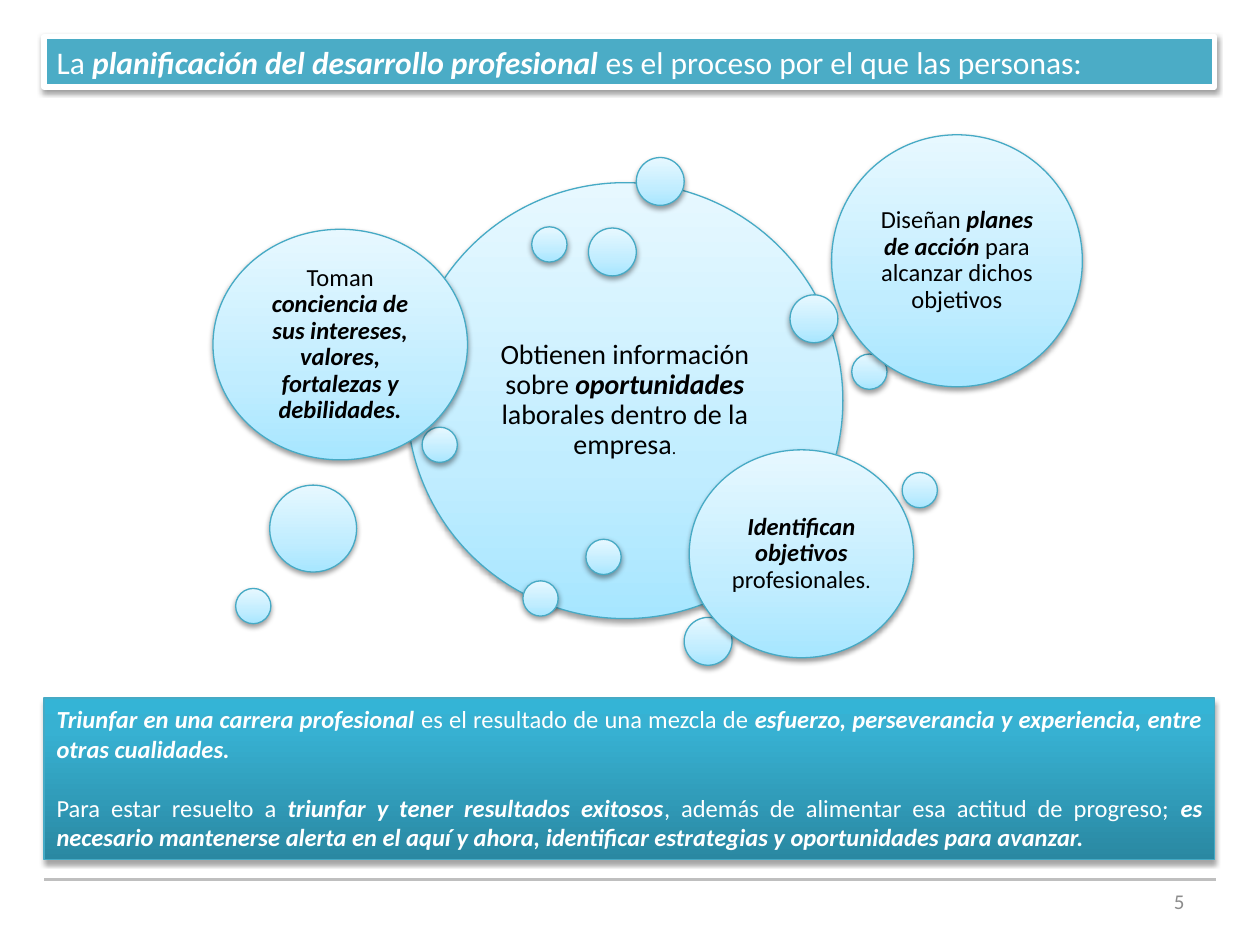
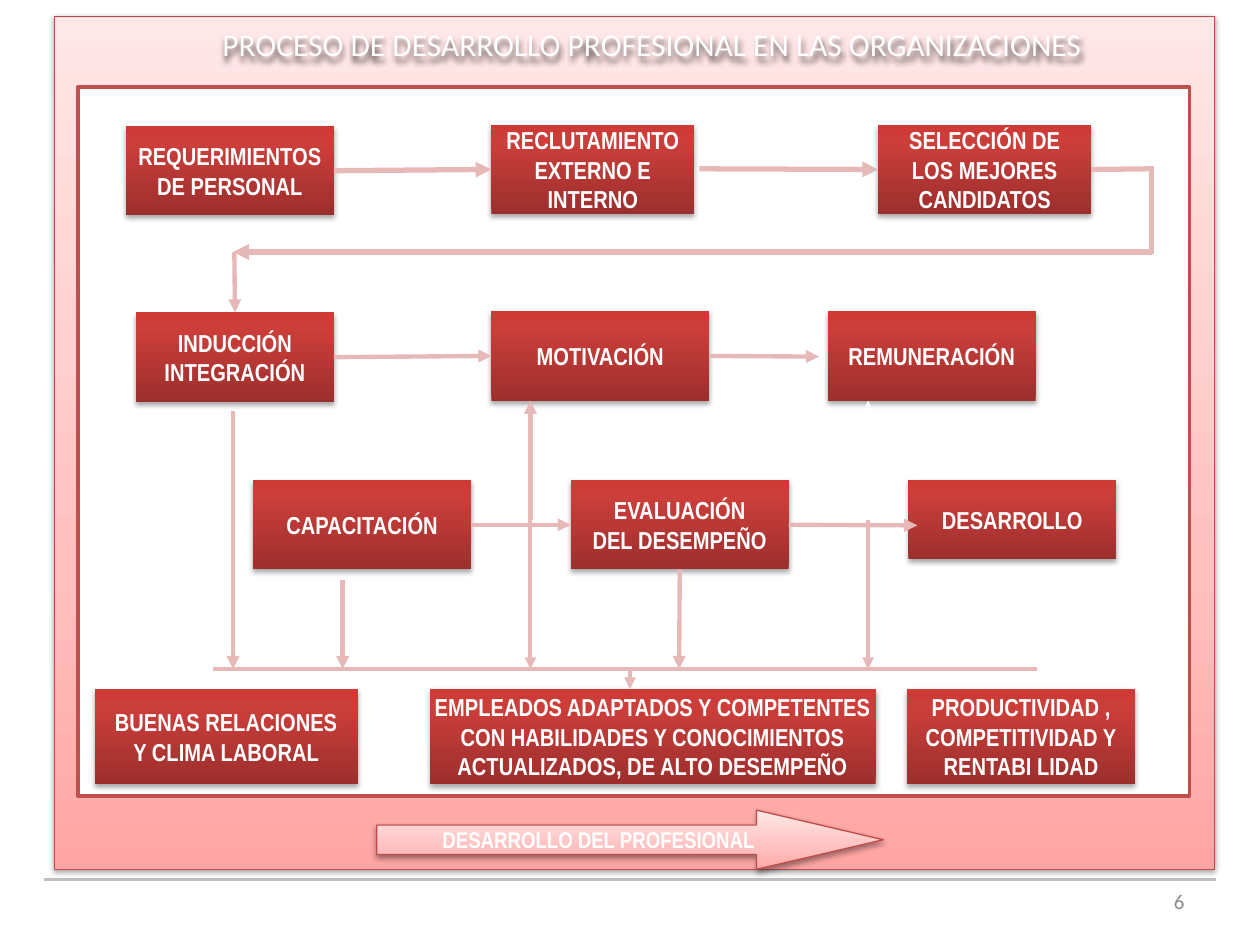
from typing import NamedTuple, Optional, Union

from lxml import etree
from pptx import Presentation
from pptx import util as u
from pptx.dml.color import RGBColor
from pptx.enum import shapes, text
from pptx.oxml.ns import qn

WHITE, BLACK, GREY, RULE = "FFFFFF", "000000", "8C8C8C", "BFBFBF"
TEAL, TEAL_EDGE = "4BACC6", "46AAC5"
RED, RED_EDGE, PINK = "C0504D", "BF4C48", "E6B9B8"
PALE_BLUE = ((0, "A7E6FF"), (35, "C1EDFF"), (100, "E7F8FF"))
DEEP_BLUE = ((0, "2A88A2"), (80, "37B1D2"), (100, "34B4D6"))
PALE_RED = ((0, "FFA6A5"), (35, "FFC0BF"), (100, "FFE7E7"))
DEEP_RED = ((0, "9C2F2D"), (80, "CB3E3A"), (100, "CE3B37"))
BODY_FONT, BOX_FONT = "Calibri", "Arial Narrow"
OVAL = shapes.MSO_SHAPE.OVAL
RECTANGLE = shapes.MSO_SHAPE.RECTANGLE
CENTER, JUSTIFY, RIGHT = text.PP_ALIGN.CENTER, text.PP_ALIGN.JUSTIFY, text.PP_ALIGN.RIGHT
MIDDLE, TOP = text.MSO_ANCHOR.MIDDLE, text.MSO_ANCHOR.TOP
SMALL, MEDIUM = 0.28, 0.38


class Area(NamedTuple):
    left: float
    top: float
    width: float
    height: float


class Bubble(NamedTuple):
    area: Area
    words: str = ""
    size: float = 14
    inset: float = 0.06
    period_size: Optional[float] = None


class Step(NamedTuple):
    name: str
    area: Area
    words: str


class Joint(NamedTuple):
    step: str
    side: int


class Point(NamedTuple):
    x: float
    y: float


class Link(NamedTuple):
    start: Union[Joint, Point]
    end: Union[Joint, Point]
    width: float = 2.5
    arrow: bool = True
    color: str = PINK


def dot(left: float, top: float, diameter: float = SMALL) -> Bubble:
    return Bubble(Area(left, top, diameter, diameter))


BUBBLES = (
    Bubble(Area(3.23, 1.45, 3.46, 3.46),
           "Obtienen información sobre *oportunidades *laborales dentro de la empresa",
           16, 0.07, 10),
    dot(5.05, 1.25, MEDIUM),
    dot(4.15, 4.61),
    dot(6.76, 2.81),
    dot(5.43, 4.9, MEDIUM),
    dot(4.22, 1.8),
    dot(3.35, 3.39),
    Bubble(Area(1.69, 1.82, 2.02, 1.83),
           "Toman *conciencia de sus intereses, valores, fortalezas y debilidades.*"),
    dot(4.67, 1.81, MEDIUM),
    dot(2.14, 3.85, 0.69),
    Bubble(Area(6.6, 1.07, 1.99, 2),
           "Diseñan *planes de acción *para alcanzar dichos objetivos"),
    dot(6.27, 2.34, MEDIUM),
    dot(1.87, 4.67),
    dot(4.65, 4.28),
    Bubble(Area(5.47, 3.57, 1.78, 1.65), "*Identifican objetivos *profesionales",
           period_size=12),
    dot(7.16, 3.75),
)

SUCCESS = (
    "*Triunfar en una carrera profesional *es el resultado de una mezcla de "
    "*esfuerzo, perseverancia y experiencia, entre otras cualidades.*\n"
    "Para estar resuelto a* triunfar y tener resultados exitosos*, además de alimentar "
    "esa actitud de progreso; *es necesario mantenerse alerta en el aquí y ahora, "
    "identificar estrategias y oportunidades para avanzar.*"
)

STEPS = (
    Step("needs", Area(1, 1, 1.65, 0.71), "REQUERIMIENTOS\nDE PERSONAL"),
    Step("recruiting", Area(3.9, 0.99, 1.61, 0.71), "RECLUTAMIENTO\nEXTERNO E\nINTERNO"),
    Step("selection", Area(6.97, 0.99, 1.69, 0.71), "SELECCIÓN DE\nLOS MEJORES\nCANDIDATOS"),
    Step("induction", Area(1.08, 2.48, 1.57, 0.71), "INDUCCIÓN\nINTEGRACIÓN"),
    Step("motivation", Area(3.9, 2.47, 1.73, 0.71), "MOTIVACIÓN"),
    Step("pay", Area(6.57, 2.47, 1.65, 0.71), "REMUNERACIÓN"),
    Step("training", Area(2.01, 3.81, 1.73, 0.71), "CAPACITACIÓN"),
    Step("evaluation", Area(4.53, 3.81, 1.73, 0.71), "EVALUACIÓN\nDEL DESEMPEÑO"),
    Step("growth", Area(7.21, 3.81, 1.65, 0.63), "DESARROLLO"),
    Step("climate", Area(0.75, 5.47, 2.09, 0.75), "BUENAS RELACIONES\nY CLIMA LABORAL"),
    Step("staff", Area(3.41, 5.47, 3.54, 0.75),
         "EMPLEADOS ADAPTADOS Y COMPETENTES\nCON HABILIDADES Y CONOCIMIENTOS\n"
         "ACTUALIZADOS, DE ALTO DESEMPEÑO"),
    Step("output", Area(7.2, 5.47, 1.81, 0.75),
         "PRODUCTIVIDAD ,\nCOMPETITIVIDAD Y\nRENTABI LIDAD"),
)

RESULTS_Y, RETURN_Y, RETURN_X = 5.31, 2, 9.14
LINKS = (
    Link(Joint("needs", 3), Joint("recruiting", 1), 3),
    Link(Point(5.55, 1.34), Joint("selection", 1), 3),
    Link(Joint("selection", 3), Point(RETURN_X, 1.34), 3, False),
    Link(Point(RETURN_X, 1.32), Point(RETURN_X, 2.02), 3, False),
    Link(Point(RETURN_X, RETURN_Y), Point(1.85, RETURN_Y), 3),
    Link(Point(1.86, RETURN_Y), Joint("induction", 0)),
    Link(Joint("induction", 3), Joint("motivation", 1)),
    Link(Joint("motivation", 3), Point(6.5, 2.83)),
    Link(Joint("training", 3), Joint("evaluation", 1)),
    Link(Joint("evaluation", 3), Point(7.28, 4.17)),
    Link(Point(1.85, 3.26), Point(1.85, RESULTS_Y)),
    Link(Point(4.21, 4.13), Point(4.21, 3.18)),
    Link(Point(6.89, 4.13), Point(6.89, 3.18), color=WHITE),
    Link(Joint("evaluation", 2), Point(5.39, RESULTS_Y)),
    Link(Point(2.72, 4.6), Point(2.72, RESULTS_Y)),
    Link(Point(1.69, RESULTS_Y), Point(8.23, RESULTS_Y), 2.25, False),
    Link(Point(5, RESULTS_Y), Point(5, 5.47), 2.25),
    Link(Point(4.21, 4.13), Point(4.21, RESULTS_Y), 2.25),
    Link(Point(6.89, 4.13), Point(6.89, RESULTS_Y), 2.25),
)


def rgb(color: str) -> RGBColor:
    return RGBColor.from_string(color)


def inches(values) -> list:
    return [u.Inches(value) for value in values]


def place(shape, area: Area) -> None:
    shape.left, shape.top, shape.width, shape.height = inches(area)


def add_child(parent, tag: str, **attributes):
    return etree.SubElement(parent, qn(tag), attributes)


def paint(shape, fill=None, line: Optional[str] = None, width: float = 0.75) -> None:
    if isinstance(fill, str):
        shape.fill.solid()
        shape.fill.fore_color.rgb = rgb(fill)
    elif fill:
        shape.fill.gradient()
        shape.fill.gradient_angle = 90
        stops = shape.element.spPr.find(qn("a:gradFill")).find(qn("a:gsLst"))
        for stop in list(stops):
            stops.remove(stop)
        for position, color in fill:
            stop = add_child(stops, "a:gs", pos=str(position * 1000))
            add_child(stop, "a:srgbClr", val=color)
    if line:
        shape.line.color.rgb = rgb(line)
        shape.line.width = u.Pt(width)
    else:
        shape.line.fill.background()
    shape.shadow.inherit = False


def cast_shadow(shape, opacity: int = 38, distance: float = 1.6) -> None:
    effects = shape.element.spPr.find(qn("a:effectLst"))
    shadow = add_child(effects, "a:outerShdw", blurRad=str(u.Pt(3.1)),
                       dist=str(u.Pt(distance)), dir="5400000", rotWithShape="0")
    color = add_child(shadow, "a:srgbClr", val=BLACK)
    add_child(color, "a:alpha", val=str(opacity * 1000))


def write(shape, words: str, *, size: float, color: str = WHITE, font: str = BODY_FONT,
          bold: bool = False, align=CENTER, anchor=MIDDLE, wrap: bool = True,
          inset: Optional[float] = None, line_spacing: float = 1, gap: float = 0,
          period_size: Optional[float] = None) -> None:
    frame = shape.text_frame
    frame.auto_size = text.MSO_AUTO_SIZE.NONE
    frame.word_wrap = wrap
    frame.vertical_anchor = anchor
    side, edge = (0.1, 0.05) if inset is None else (inset, inset)
    frame.margin_left = frame.margin_right = u.Inches(side)
    frame.margin_top = frame.margin_bottom = u.Inches(edge)
    for index, line in enumerate(words.split("\n")):
        paragraph = frame.add_paragraph() if index else frame.paragraphs[0]
        paragraph.alignment = align
        paragraph.line_spacing = line_spacing
        if index:
            paragraph.space_before = u.Pt(gap)
        pieces = [(piece, number % 2 == 1, size)
                  for number, piece in enumerate(line.split("*")) if piece]
        if period_size:
            pieces.append((".", False, period_size))
        for piece, emphasis, piece_size in pieces:
            run = paragraph.add_run()
            run.text = piece
            run.font.name = font
            run.font.size = u.Pt(piece_size)
            run.font.bold = bold or emphasis
            run.font.italic = emphasis
            run.font.color.rgb = rgb(color)


def add_block(slide, kind, area: Area, fill, line: Optional[str] = None, width: float = 0.75):
    shape = slide.shapes.add_shape(kind, *inches(area))
    paint(shape, fill, line, width)
    return shape


def add_link(slide, link: Link, boxes: dict):
    ends = []
    for end in (link.start, link.end):
        if isinstance(end, Joint):
            box = boxes[end.step]
            x = box.left + box.width * (0.5, 0, 0.5, 1)[end.side]
            y = box.top + box.height * (0, 0.5, 1, 0.5)[end.side]
            ends += [int(x), int(y)]
        else:
            ends += inches(end)
    connector = slide.shapes.add_connector(shapes.MSO_CONNECTOR.STRAIGHT, *ends)
    if isinstance(link.start, Joint):
        connector.begin_connect(boxes[link.start.step], link.start.side)
    if isinstance(link.end, Joint):
        connector.end_connect(boxes[link.end.step], link.end.side)
    connector.line.color.rgb = rgb(link.color)
    connector.line.width = u.Pt(link.width)
    properties = connector.element.spPr
    if link.arrow:
        add_child(properties.find(qn("a:ln")), "a:tailEnd", type="triangle")
    add_child(properties, "a:effectLst")


def add_slide(presentation, number: int):
    slide = presentation.slides.add_slide(presentation.slide_layouts[5])
    add_link(slide, Link(Point(0.35, 6.98), Point(9.65, 6.98), 2, False, RULE), {})
    label = slide.shapes.add_textbox(*inches(Area(7.17, 6.95, 2.33, 0.4)))
    write(label, str(number), size=12, color=GREY, align=RIGHT)
    return slide


def build_planning_slide(presentation) -> None:
    slide = add_slide(presentation, 5)
    title = slide.shapes.title
    place(title, Area(0.35, 0.29, 9.29, 0.4))
    paint(title, TEAL, WHITE, 3)
    cast_shadow(title)
    write(title, "La *planificación del desarrollo profesional *es el proceso por el que "
          "las personas:", size=18, align=JUSTIFY, anchor=TOP)
    for bubble in BUBBLES:
        circle = add_block(slide, OVAL, bubble.area, PALE_BLUE, TEAL_EDGE)
        cast_shadow(circle)
        if bubble.words:
            write(circle, bubble.words, size=bubble.size, color=BLACK, inset=bubble.inset,
                  line_spacing=0.9, period_size=bubble.period_size)
    panel = add_block(slide, RECTANGLE, Area(0.35, 5.54, 9.29, 1.28), DEEP_BLUE, TEAL_EDGE)
    cast_shadow(panel, 35, 1.8)
    write(panel, SUCCESS, size=14, align=JUSTIFY, anchor=TOP, gap=17)


def build_process_slide(presentation) -> None:
    slide = add_slide(presentation, 6)
    backdrop = add_block(slide, RECTANGLE, Area(0.43, 0.13, 9.21, 6.77), PALE_RED, RED_EDGE)
    cast_shadow(backdrop)
    add_block(slide, RECTANGLE, Area(0.62, 0.69, 8.82, 5.63), WHITE, RED, 2)
    boxes = {}
    for step in STEPS:
        box = add_block(slide, RECTANGLE, step.area, DEEP_RED)
        cast_shadow(box, 35, 1.8)
        write(box, step.words, size=14, font=BOX_FONT, bold=True, wrap=False)
        boxes[step.name] = box
    for link in LINKS:
        add_link(slide, link, boxes)
    arrow = add_block(slide, shapes.MSO_SHAPE.RIGHT_ARROW, Area(2.99, 6.43, 4.02, 0.47),
                      PALE_RED, RED_EDGE)
    arrow.adjustments[0], arrow.adjustments[1] = 0.5, 2.14
    cast_shadow(arrow)
    write(arrow, "DESARROLLO DEL PROFESIONAL", size=13, font=BOX_FONT, bold=True, wrap=False)
    title = slide.shapes.title
    title.element.getparent().append(title.element)
    place(title, Area(0.57, 0.15, 9.21, 0.4))
    paint(title)
    cast_shadow(title, 60, 2.5)
    write(title, "PROCESO DE DESARROLLO PROFESIONAL EN LAS ORGANIZACIONES", size=18, anchor=TOP)


def main() -> None:
    presentation = Presentation()
    presentation.slide_width, presentation.slide_height = u.Inches(10), u.Inches(7.5)
    build_planning_slide(presentation)
    build_process_slide(presentation)
    presentation.save("out.pptx")


if __name__ == "__main__":
    main()
